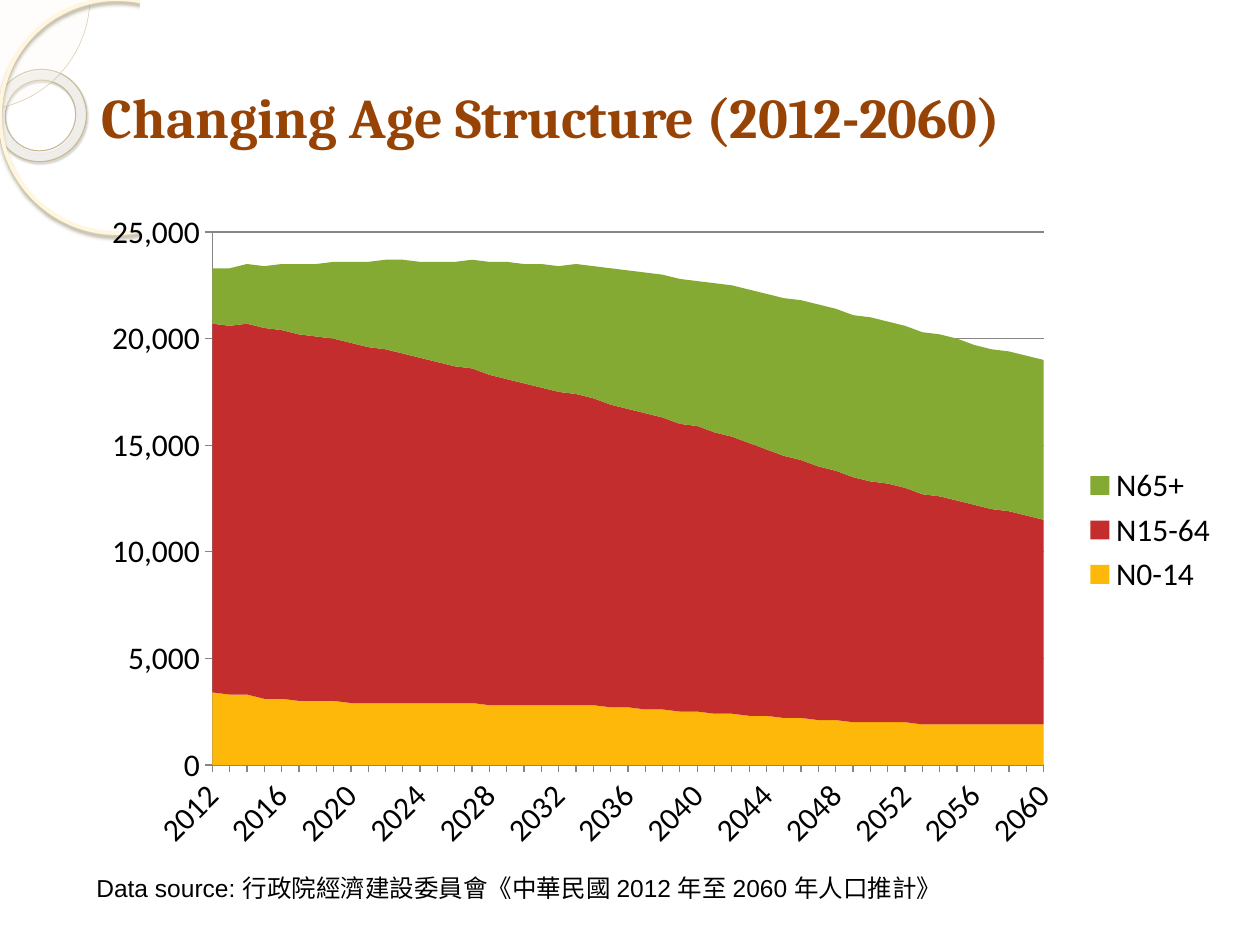
"""Build a slide with a stacked area chart of the changing age structure."""
from lxml import etree
from pptx import Presentation, util as u
from pptx.chart.data import CategoryChartData
from pptx.dml.color import RGBColor
from pptx.enum import chart as ch, shapes, text
from pptx.oxml import parse_xml
from pptx.oxml.ns import nsdecls, qn

PX = 914400 / 126
COLORS = {
    "title": "964305", "text": "000000", "page": "FFFFFF", "axis": "868686",
    "ring": "FFF6DB", "ring_shadow": "AFA58D", "pie": "FEFAF4", "pie_line": "D3C39F",
    "donut_line": "C7B893", "donut_shadow": "5A5444",
}
TITLE = "Changing Age Structure (2012-2060)"
SOURCE = "Data source: 行政院經濟建設委員會《中華民國 2012 年至 2060 年人口推計》"
YEARS = range(2012, 2061)
HUNDREDS = [
    ("N0-14", "FEB80A", [
        34, 33, 33, 31, 31, 30, 30, 30, 29, 29, 29, 29, 29, 29, 29, 29, 28,
        28, 28, 28, 28, 28, 28, 27, 27, 26, 26, 25, 25, 24, 24, 23, 23, 22,
        22, 21, 21, 20, 20, 20, 20, 19, 19, 19, 19, 19, 19, 19, 19]),
    ("N15-64", "C32D2E", [
        173, 173, 174, 174, 173, 172, 171, 170, 169, 167, 166, 164, 162, 160, 158, 157, 155,
        153, 151, 149, 147, 146, 144, 142, 140, 139, 137, 135, 134, 132, 130, 128, 125, 123,
        121, 119, 117, 115, 113, 112, 110, 108, 107, 105, 103, 101, 100, 98, 96]),
    ("N65+", "84AA33", [
        26, 27, 28, 29, 31, 33, 34, 36, 38, 40, 42, 44, 45, 47, 49, 51, 53,
        55, 56, 58, 59, 61, 62, 64, 65, 66, 67, 68, 68, 70, 71, 72, 73, 74,
        75, 76, 76, 76, 77, 76, 76, 76, 76, 76, 75, 75, 75, 75, 75]),
]
DONUT_STOPS = [(0, "FFFCF6", 70), (70, "FFFEFB", 55), (100, "F0D28E", 60)]
PLOT = {"x": 0.108, "y": 0.05, "w": 0.728, "h": 0.805}


def emu(*lengths):
    return [u.Emu(round(length * PX)) for length in lengths]


def rgb(name):
    return RGBColor.from_string(COLORS.get(name, name))


def write(frame, words, size, font, color, bold=False):
    frame.word_wrap = True
    para = frame.paragraphs[0]
    para.alignment = text.PP_ALIGN.LEFT
    span = para.add_run()
    span.text = words
    span.font.size, span.font.name, span.font.bold = u.Pt(size), font, bold
    span.font.color.rgb = rgb(color)


def add_ornament(page, kind, place, fill=None, line=None, width=0, adjust=(), turn=0):
    shape = page.shapes.add_shape(kind, *emu(*place))
    shape.shadow.inherit = False
    shape.rotation = turn
    for index, value in enumerate(adjust):
        shape.adjustments[index] = value
    if fill:
        shape.fill.solid()
        shape.fill.fore_color.rgb = rgb(fill)
    else:
        shape.fill.background()
    if line:
        shape.line.color.rgb = rgb(line)
        shape.line.width = u.Pt(width)
    else:
        shape.line.fill.background()
    return shape


def add_shadow(shape, color, alpha, blur, distance, angle):
    effects = shape.element.spPr.find(qn("a:effectLst"))
    effects.append(parse_xml(
        f'<a:outerShdw {nsdecls("a")} blurRad="{u.Pt(blur)}" dist="{u.Pt(distance)}" '
        f'dir="{angle * 60000}" algn="tl" rotWithShape="0"><a:srgbClr val="{COLORS[color]}">'
        f'<a:alpha val="{alpha * 1000}"/></a:srgbClr></a:outerShdw>'))


def add_ornaments(page):
    kinds = shapes.MSO_SHAPE
    donut = add_ornament(page, kinds.DONUT, (-5, 69, 91, 93), line="donut_line",
                         width=0.58, adjust=[0.118], turn=38.6)
    stops = "".join(
        f'<a:gs pos="{pos * 1000}"><a:srgbClr val="{color}"><a:alpha val="{alpha * 1000}"/>'
        f'</a:srgbClr></a:gs>' for pos, color, alpha in DONUT_STOPS)
    plain = donut.element.spPr.find(qn("a:noFill"))
    plain.getparent().replace(plain, parse_xml(
        f'<a:gradFill {nsdecls("a")}><a:gsLst>{stops}</a:gsLst><a:path path="circle">'
        '<a:fillToRect l="-408000" t="-50000" r="508000" b="150000"/></a:path></a:gradFill>'))
    add_shadow(donut, "donut_shadow", 35, 1, 1.2, 75)

    pie = add_ornament(page, kinds.PIE, (-136, -116, 226, 226), "pie", "pie_line", 0.25,
                       adjust=[0, 54.02])
    tint = pie.element.spPr.find(qn("a:solidFill"))[0]
    etree.SubElement(tint, qn("a:alpha"), val="33000")

    ring = add_ornament(page, kinds.OVAL, (0, -1, 234, 234), line="ring", width=2.15)
    add_shadow(ring, "ring_shadow", 85, 2, 2, 90)
    add_ornament(page, kinds.RECTANGLE, (140, 0, 1120, 945), "page")


def add_age_chart(page):
    data = CategoryChartData(number_format="#,##0")
    data.categories = [str(year) for year in YEARS]
    for name, _, values in HUNDREDS:
        data.add_series(name, [value * 100 for value in values])
    chart = page.shapes.add_chart(
        ch.XL_CHART_TYPE.AREA_STACKED, *emu(89, 199, 1142, 662), data).chart
    chart.has_title = False
    chart.font.size, chart.font.name = u.Pt(18), "Calibri"
    chart.font.color.rgb = rgb("text")
    plot = chart.plots[0]
    plot.vary_by_categories = False
    for series, (_, color, _) in zip(plot.series, HUNDREDS):
        series.format.fill.solid()
        series.format.fill.fore_color.rgb = rgb(color)
        series.format.line.fill.background()

    years, people = chart.category_axis, chart.value_axis
    years.has_major_gridlines = False
    people.has_major_gridlines = True
    people.minimum_scale, people.maximum_scale, people.major_unit = 0, 25000, 5000
    people.tick_labels.number_format = "#,##0"
    people.tick_labels.number_format_is_linked = False
    for axis in (years, people):
        axis.major_tick_mark = ch.XL_TICK_MARK.OUTSIDE
        axis.minor_tick_mark = ch.XL_TICK_MARK.NONE
        axis.format.line.color.rgb = rgb("axis")
    people.major_gridlines.format.line.color.rgb = rgb("axis")
    years.tick_labels.font.size = u.Pt(18)
    years._element.find(qn("c:txPr")).find(qn("a:bodyPr")).set("rot", "-2700000")
    people._element.find(qn("c:crossBetween")).set("val", "midCat")

    chart.has_legend = True
    chart.legend.position = ch.XL_LEGEND_POSITION.RIGHT
    chart.legend.include_in_layout = False

    area = chart._chartSpace.chart.plotArea
    for old in area.findall(qn("c:layout")):
        area.remove(old)
    modes = '<c:xMode val="edge"/><c:yMode val="edge"/>'
    sizes = "".join(f'<c:{key} val="{value}"/>' for key, value in PLOT.items())
    area.insert(0, parse_xml(
        f'<c:layout {nsdecls("c")}><c:manualLayout><c:layoutTarget val="inner"/>'
        f'{modes}{sizes}</c:manualLayout></c:layout>'))


def main():
    deck = Presentation()
    deck.slide_width, deck.slide_height = emu(1260, 945)
    page = deck.slides.add_slide(deck.slide_layouts[5])
    add_ornaments(page)
    title = page.shapes.title
    title.element.getparent().append(title.element)
    title.left, title.top, title.width, title.height = emu(89, 38, 1142, 157)
    title.text_frame.vertical_anchor = text.MSO_ANCHOR.MIDDLE
    write(title.text_frame, TITLE, 32, "Cambria", "title", bold=True)
    add_age_chart(page)
    box = page.shapes.add_textbox(*emu(84, 867, 872, 43))
    box.text_frame.auto_size = text.MSO_AUTO_SIZE.SHAPE_TO_FIT_TEXT
    write(box.text_frame, SOURCE, 14, "Arial", "text")
    deck.save("out.pptx")


if __name__ == "__main__":
    main()
